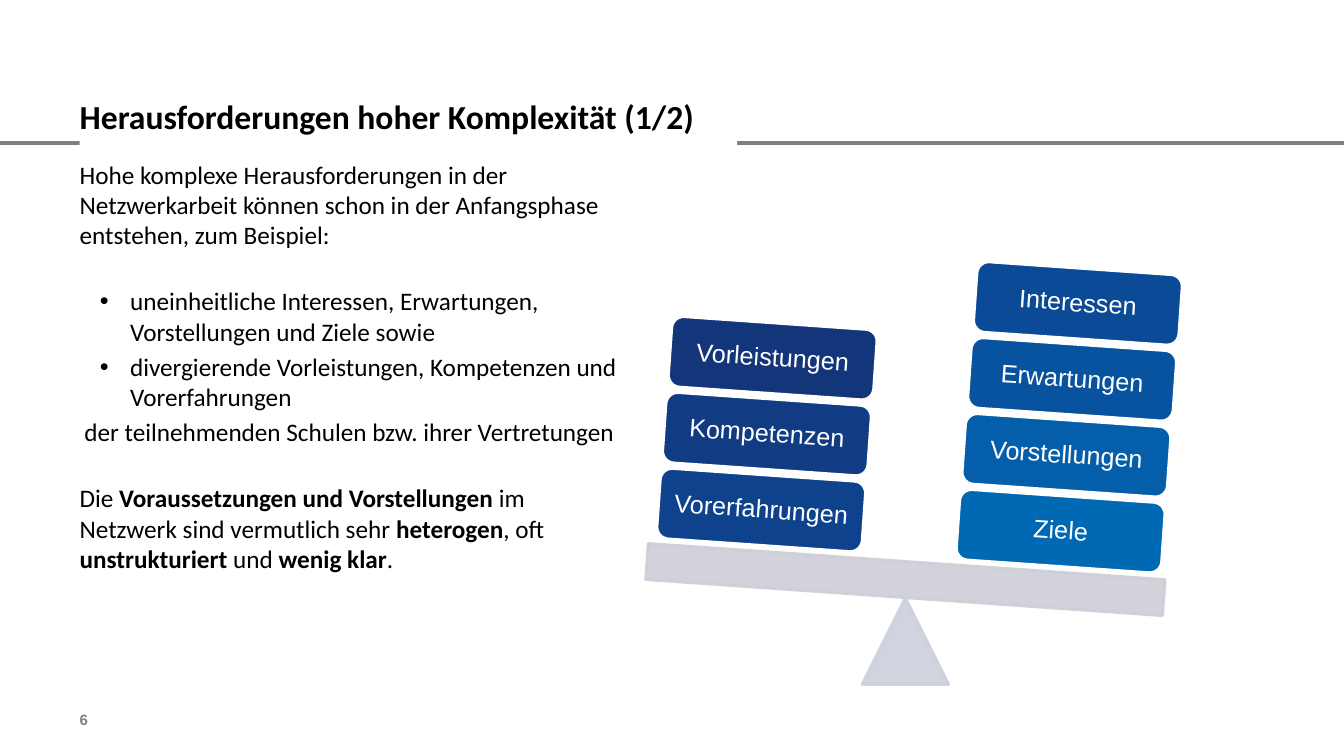
from lxml.etree import SubElement
from pptx import Presentation
from pptx.dml.color import RGBColor
from pptx.enum.shapes import MSO_CONNECTOR, MSO_SHAPE
from pptx.enum.text import MSO_ANCHOR, PP_ALIGN
from pptx.oxml.ns import qn
from pptx.util import Inches, Pt

BLACK = RGBColor(0, 0, 0)
WHITE = RGBColor(255, 255, 255)
GRAY = RGBColor(0x80, 0x80, 0x80)
FULCRUM = RGBColor(0xCC, 0xCF, 0xDC)
BEAM = RGBColor(0xCD, 0xCE, 0xD7)

TITLE = "Herausforderungen hoher Komplexität (1/2)"
PAGE = "6"
BODY = [
    ("plain", 0, [("Hohe komplexe Herausforderungen in der Netzwerkarbeit können "
                   "schon in der Anfangsphase entstehen, zum Beispiel:", False)]),
    ("bullet", 25.5, [("uneinheitliche Interessen, Erwartungen, Vorstellungen "
                       "und Ziele sowie", False)]),
    ("bullet", 3.6, [("divergierende Vorleistungen, Kompetenzen und "
                      "Vorerfahrungen", False)]),
    ("center", 3.6, [("der teilnehmenden Schulen bzw. ihrer Vertretungen", False)]),
    ("plain", 25.5, [("Die ", False), ("Voraussetzungen und Vorstellungen ", True),
                     ("im Netzwerk sind vermutlich sehr ", False),
                     ("heterogen", True), (", oft ", False),
                     ("unstrukturiert", True), (" und ", False),
                     ("wenig klar", True), (".", False)]),
]
STACKS = [
    ((9.5, 4.92), [("Ziele", RGBColor(0x00, 0x69, 0xB4)),
                   ("Vorstellungen", RGBColor(0x04, 0x5E, 0xAA)),
                   ("Erwartungen", RGBColor(0x07, 0x53, 0xA0)),
                   ("Interessen", RGBColor(0x0B, 0x4A, 0x96))]),
    ((6.53, 4.71), [("Vorerfahrungen", RGBColor(0x0E, 0x42, 0x8C)),
                    ("Kompetenzen", RGBColor(0x11, 0x3B, 0x83)),
                    ("Vorleistungen", RGBColor(0x13, 0x35, 0x7A))]),
]
TILT = 4
STEP_X, STEP_Y = 0.057, 0.753
BLOCK_W, BLOCK_H = 2.04, 0.7
MARGIN = 0.79

deck = Presentation()
deck.slide_width, deck.slide_height = Inches(13.33), Inches(7.5)
slide = deck.slides.add_slide(deck.slide_layouts[6])


def prepare(frame, inset=0, anchor=MSO_ANCHOR.TOP):
    frame.word_wrap = True
    frame.vertical_anchor = anchor
    frame.margin_left = frame.margin_right = Inches(inset)
    frame.margin_top = frame.margin_bottom = Inches(inset)
    return frame


def add_run(paragraph, text, size, color, font="Calibri", bold=False):
    run = paragraph.add_run()
    run.text = text
    run.font.name, run.font.size, run.font.bold = font, Pt(size), bold
    run.font.color.rgb = color


def add_box(kind, left, top, width, height, fill, outline=None, tilt=0, alpha=None):
    box = slide.shapes.add_shape(kind, *map(Inches, (left, top, width, height)))
    box.shadow.inherit = False
    box.rotation = tilt
    box.fill.solid()
    box.fill.fore_color.rgb = fill
    if outline is None:
        box.line.fill.background()
    else:
        box.line.color.rgb = outline
        box.line.width = Pt(2)
    if alpha:
        for color in box._element.spPr.iter(qn("a:srgbClr")):
            SubElement(color, qn("a:alpha"), val=str(alpha * 1000))
    return box


rule = slide.shapes.add_connector(MSO_CONNECTOR.STRAIGHT, 0, Inches(1.42),
                                  deck.slide_width, Inches(1.42))
rule.line.color.rgb = GRAY
rule.line.width = Pt(3.25)
SubElement(rule._element.spPr, qn("a:effectLst"))

body = slide.shapes.add_textbox(*map(Inches, (MARGIN, 1.58, 5.35, 5.2)))
body_frame = prepare(body.text_frame)
for index, (style, gap, runs) in enumerate(BODY):
    paragraph = body_frame.add_paragraph() if index else body_frame.paragraphs[0]
    if gap:
        paragraph.space_before = Pt(gap)
    if style == "center":
        paragraph.alignment = PP_ALIGN.CENTER
    if style == "bullet":
        props = paragraph._p.get_or_add_pPr()
        props.set("marL", str(Inches(0.5)))
        props.set("indent", str(Inches(-0.3)))
        SubElement(props, qn("a:buFont"), typeface="Arial")
        SubElement(props, qn("a:buChar"), char="•")
    for text, bold in runs:
        add_run(paragraph, text, 18, BLACK, bold=bold)

title = add_box(MSO_SHAPE.RECTANGLE, MARGIN, 0.95, 6.52, 0.63, WHITE)
heading = prepare(title.text_frame).paragraphs[0]
heading.alignment = PP_ALIGN.LEFT
add_run(heading, TITLE, 24, BLACK, bold=True)

add_box(MSO_SHAPE.ISOSCELES_TRIANGLE, 8.55, 5.93, 0.86, 0.86, FULCRUM, FULCRUM, alpha=90)
add_box(MSO_SHAPE.RECTANGLE, 6.41, 5.57, 5.14, 0.36, BEAM, BEAM, TILT, 90)

for (left, top), blocks in STACKS:
    for level, (label, color) in enumerate(blocks):
        block = add_box(MSO_SHAPE.ROUNDED_RECTANGLE, left + level * STEP_X,
                        top - level * STEP_Y, BLOCK_W, BLOCK_H, color, WHITE, TILT)
        caption = prepare(block.text_frame, 0.07, MSO_ANCHOR.MIDDLE).paragraphs[0]
        caption.alignment = PP_ALIGN.CENTER
        caption.line_spacing = 0.9
        add_run(caption, label, 18, WHITE, "Arial")

page = slide.shapes.add_textbox(*map(Inches, (MARGIN, 7.05, 0.42, 0.37)))
add_run(prepare(page.text_frame).paragraphs[0], PAGE, 10.7, GRAY, "Arial", True)

deck.save("out.pptx")
